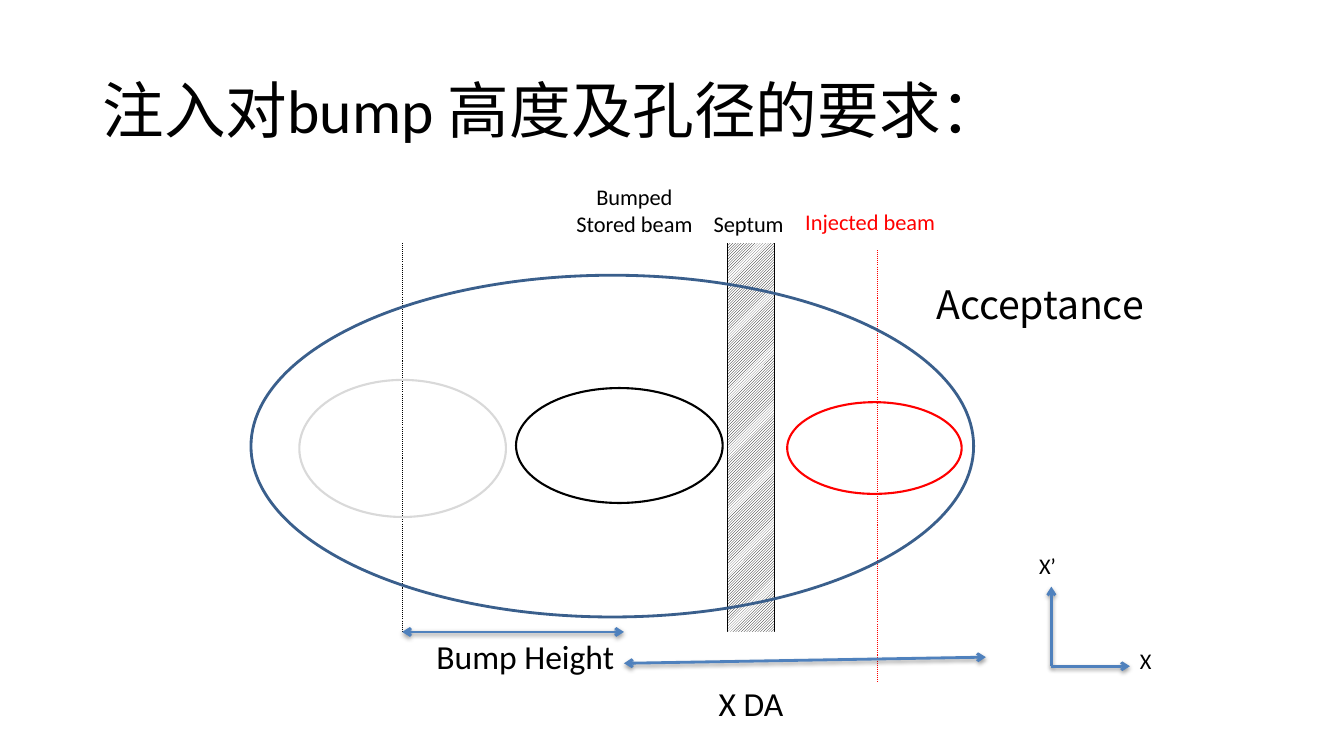
from typing import NamedTuple

from lxml import etree
from pptx import Presentation
from pptx.dml.color import RGBColor
from pptx.enum.dml import MSO_LINE, MSO_PATTERN
from pptx.enum.shapes import MSO_CONNECTOR, MSO_SHAPE
from pptx.enum.text import MSO_ANCHOR, MSO_AUTO_SIZE, PP_ALIGN
from pptx.oxml import parse_xml
from pptx.oxml.ns import nsdecls, qn
from pptx.shapes.autoshape import Shape
from pptx.shapes.connector import Connector
from pptx.shapes.shapetree import GroupShapes, SlideShapes
from pptx.util import Pt

RECTANGLE, OVAL = MSO_SHAPE.RECTANGLE, MSO_SHAPE.OVAL
STRAIGHT = MSO_CONNECTOR.STRAIGHT
DOTTED = MSO_LINE.ROUND_DOT
HATCHED = MSO_PATTERN.LIGHT_UPWARD_DIAGONAL
LEFT, CENTER = PP_ALIGN.LEFT, PP_ALIGN.CENTER
MIDDLE = MSO_ANCHOR.MIDDLE
FIT_SHAPE = MSO_AUTO_SIZE.SHAPE_TO_FIT_TEXT

BLACK, WHITE, RED = "000000", "FFFFFF", "FF0000"
GREY, BLUE, DARK_BLUE = "D9D9D9", "4F81BD", "3A5F8C"
ORBIT_X, BUMP_X, BUMP_Y = 287.3, 445.7, 451.4
ORIGIN_X, ORIGIN_Y = 751, 475.9

Shapes = SlideShapes | GroupShapes


class Box(NamedTuple):
    left: float
    top: float
    width: float
    height: float


class Ellipse(NamedTuple):
    box: Box
    color: str
    weight: float = 1.5


class Segment(NamedTuple):
    x1: float
    y1: float
    x2: float
    y2: float
    color: str = BLUE
    double: bool = False


class Label(NamedTuple):
    text: str
    box: Box
    size: float = 16
    color: str = BLACK
    font: str = "Calibri"
    align: PP_ALIGN = LEFT
    wrap: bool = False


MASKS = [Box(x, y, 73.4, 22.3) for x, y in
         ((491, 151.2), (486, BUMP_Y), (344.2, 151.2), (344.2, BUMP_Y))]
CENTER_LINES = [
    Segment(ORBIT_X, 173.5, ORBIT_X, BUMP_Y, BLACK),
    Segment(627.1, 178.6, 627.1, 487.4, RED),
]
ELLIPSES = [
    Ellipse(Box(368.6, 277.2, 147.6, 82.1), BLACK),
    Ellipse(Box(562.3, 287.3, 124.6, 65.5), RED),
    Ellipse(Box(213.8, 271.4, 147.6, 97.9), GREY),
    Ellipse(Box(179.3, 196.6, 516.2, 244.1), DARK_BLUE, 2),
]
SPANS = [
    Segment(BUMP_X, 473.8, 704.2, 469.4, double=True),
    Segment(ORBIT_X, BUMP_Y, BUMP_X, BUMP_Y, double=True),
]
AXES = [
    Segment(ORIGIN_X, ORIGIN_Y, ORIGIN_X, 419),
    Segment(ORIGIN_X, ORIGIN_Y, 807.1, ORIGIN_Y),
]
AXIS_LABELS = [
    Label("X’", Box(735.1, 391, 26.6, 26.6)),
    Label("X", Box(807.1, 458.6, 23, 26.6)),
]
LABELS = [
    Label("Bumped\nStored beam", Box(403.9, 127.4, 98.6, 46.1), align=CENTER),
    Label("Injected beam", Box(568.1, 145.4, 108.7, 26.6), color=RED),
    Label("Septum", Box(502.6, 146.9, 65.5, 26.6)),
    Label("X DA", Box(506.2, 484.6, 67, 36), 24),
    Label("Bump Height", Box(304.6, 450.7, 142.6, 36), 24),
    Label("Acceptance", Box(661.7, 196.6, 168.5, 41), 28,
          font="Noto Sans CJK SC", wrap=True),
]
TITLE = Label("注入对bump 高度及孔径的要求：", Box(66.2, 28.8, 828, 104.4), 44, wrap=True)


def rgb(color: str) -> RGBColor:
    return RGBColor.from_string(color)


def add_plain(shapes: Shapes, kind: MSO_SHAPE, box: Box) -> Shape:
    shape = shapes.add_shape(kind, *map(Pt, box))
    shape.shadow.inherit = False
    shape.fill.background()
    shape.line.fill.background()
    return shape


def add_septum(shapes: Shapes) -> None:
    septum = add_plain(shapes, RECTANGLE, Box(519.8, 162, 33.8, 300.2))
    septum.fill.patterned()
    septum.fill.pattern = HATCHED
    septum.fill.fore_color.rgb = rgb(BLACK)
    septum.fill.back_color.rgb = rgb(WHITE)
    septum.line.color.rgb = rgb(BLACK)
    septum.line.width = Pt(0.75)


def add_mask(shapes: Shapes, box: Box) -> None:
    mask = add_plain(shapes, RECTANGLE, box)
    mask.fill.solid()
    mask.fill.fore_color.rgb = rgb(WHITE)


def add_ellipse(shapes: Shapes, ellipse: Ellipse) -> None:
    outline = add_plain(shapes, OVAL, ellipse.box).line
    outline.color.rgb = rgb(ellipse.color)
    outline.width = Pt(ellipse.weight)


def add_segment(shapes: Shapes, segment: Segment, weight: float) -> Connector:
    connector = shapes.add_connector(STRAIGHT, *map(Pt, segment[:4]))
    connector.line.color.rgb = rgb(segment.color)
    connector.line.width = Pt(weight)
    return connector


def add_center_line(shapes: Shapes, segment: Segment) -> None:
    connector = add_segment(shapes, segment, 0.75)
    connector.line.dash_style = DOTTED
    etree.SubElement(connector._element.spPr, qn("a:effectLst"))


def add_arrow(shapes: Shapes, segment: Segment) -> None:
    connector = add_segment(shapes, segment, 2)
    properties = connector._element.spPr
    outline = properties.find(qn("a:ln"))
    for end in ("a:headEnd", "a:tailEnd") if segment.double else ("a:tailEnd",):
        etree.SubElement(outline, qn(end), type="arrow")
    properties.append(parse_xml(
        f'<a:effectLst {nsdecls("a")}>'
        '<a:outerShdw blurRad="40000" dist="20000" dir="5400000" rotWithShape="0">'
        f'<a:srgbClr val="{BLACK}"><a:alpha val="38000"/></a:srgbClr>'
        '</a:outerShdw></a:effectLst>'))


def add_label(shapes: Shapes, label: Label) -> Shape:
    textbox = shapes.add_textbox(*map(Pt, label.box))
    frame = textbox.text_frame
    frame.text = label.text
    frame.word_wrap = label.wrap
    frame.auto_size = FIT_SHAPE
    for paragraph in frame.paragraphs:
        paragraph.alignment = label.align
        paragraph.font.size = Pt(label.size)
        paragraph.font.name = label.font
        paragraph.font.color.rgb = rgb(label.color)
    return textbox


def add_title(shapes: Shapes) -> None:
    frame = add_label(shapes, TITLE).text_frame
    frame.auto_size = MSO_AUTO_SIZE.NONE
    frame.vertical_anchor = MIDDLE
    frame.paragraphs[0].line_spacing = 0.9


def main() -> None:
    presentation = Presentation()
    presentation.slide_width, presentation.slide_height = Pt(960), Pt(540)
    shapes = presentation.slides.add_slide(presentation.slide_layouts[6]).shapes
    add_septum(shapes)
    for mask in MASKS:
        add_mask(shapes, mask)
    for center_line in CENTER_LINES:
        add_center_line(shapes, center_line)
    for ellipse in ELLIPSES:
        add_ellipse(shapes, ellipse)
    for span in SPANS:
        add_arrow(shapes, span)
    axes = shapes.add_group_shape().shapes
    for axis in AXES:
        add_arrow(axes, axis)
    for label in AXIS_LABELS:
        add_label(axes, label)
    for label in LABELS:
        add_label(shapes, label)
    add_title(shapes)
    presentation.save("out.pptx")


if __name__ == "__main__":
    main()
